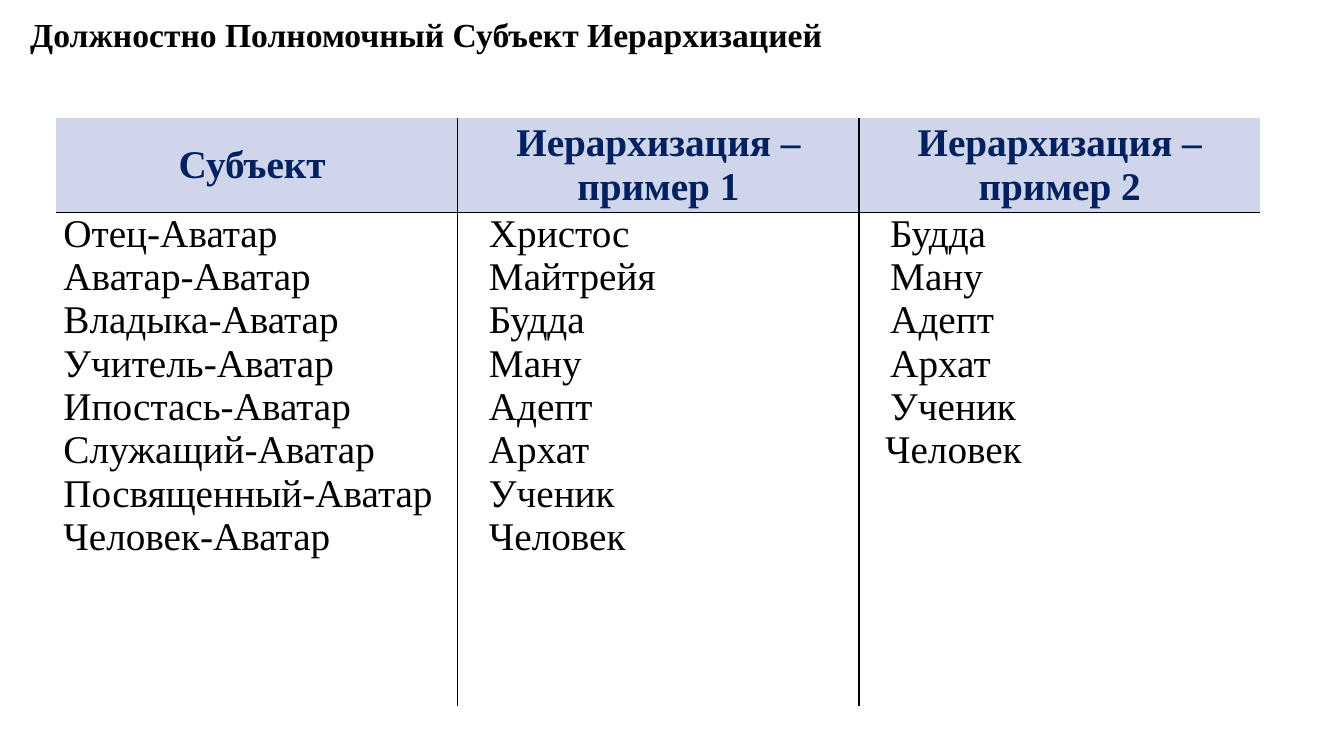
from lxml.etree import SubElement
from pptx import Presentation
from pptx.dml.color import RGBColor
from pptx.enum.text import MSO_ANCHOR, MSO_AUTO_SIZE, PP_ALIGN
from pptx.oxml.ns import qn
from pptx.util import Inches, Pt

TITLE = "Должностно Полномочный Субъект Иерархизацией"
TITLE_BOX = (0.2, 0.09, 13.13, 0.5)
TABLE_BOX = (0.56, 1.17, 11.94, 5.83)
HEADER_SHARE = 0.16
INDENT = 0.24
STEPS = ["Будда", "Ману", "Адепт", "Архат", "Ученик", "Человек"]
SUBJECTS = ["Отец", "Аватар", "Владыка", "Учитель", "Ипостась", "Служащий",
            "Посвященный", "Человек"]
COLUMNS = [
    ("Субъект ", [f"{subject}-Аватар" for subject in SUBJECTS], 0),
    ("Иерархизация –\vпример 1", ["Христос", "Майтрейя", *STEPS], INDENT),
    ("Иерархизация –\vпример 2", STEPS, INDENT),
]


def color(code):
    """Turn a hex string into a colour."""
    return RGBColor.from_string(code)


def set_values(target, values):
    """Set each attribute of the target from a dict."""
    for name, value in values.items():
        setattr(target, name, value)


def format_para(para, size, code, bold, align):
    """Give a paragraph its alignment and font."""
    set_values(para, {"alignment": align})
    set_values(para.font, {"name": "Times New Roman", "size": Pt(size), "bold": bold})
    para.font.color.rgb = color(code)


def set_borders(cell, visible_sides):
    """Draw black lines on the named sides and none on the others."""
    properties = cell._tc.get_or_add_tcPr()
    for side in "LRTB":
        line = SubElement(properties, qn(f"a:ln{side}"), w=str(Pt(1)))
        if side in visible_sides:
            fill = SubElement(line, qn("a:solidFill"))
            SubElement(fill, qn("a:srgbClr"), val="000000")
        else:
            SubElement(line, qn("a:noFill"))


def fill_cell(cell, lines, size, code, bold, align, indent=0):
    """Write the lines into a cell, one paragraph each."""
    set_values(cell, {"margin_left": Inches(0.07), "margin_right": Inches(0.07),
                      "margin_top": 0, "margin_bottom": 0})
    cell.text_frame.text = "\n".join(lines)
    for para in cell.text_frame.paragraphs:
        para._p.get_or_add_pPr().set("marL", str(Inches(indent)))
        format_para(para, size, code, bold, align)


def add_title(page, box):
    """Place the heading in the title placeholder."""
    title = page.shapes.title
    set_values(title, dict(zip(("left", "top", "width", "height"), map(Inches, box))))
    frame = title.text_frame
    set_values(frame, {"text": TITLE, "word_wrap": True,
                       "vertical_anchor": MSO_ANCHOR.TOP,
                       "auto_size": MSO_AUTO_SIZE.SHAPE_TO_FIT_TEXT})
    format_para(frame.paragraphs[0], 24, "000000", True, PP_ALIGN.LEFT)


def add_hierarchy_table(page, box):
    """Build the table of subjects and the two example hierarchies."""
    table = page.shapes.add_table(2, len(COLUMNS), *map(Inches, box)).table
    set_values(table, {"first_row": False, "horz_banding": False})
    for row, share in zip(table.rows, (HEADER_SHARE, 1 - HEADER_SHARE)):
        row.height = Inches(box[3] * share)
    for index, (heading, entries, indent) in enumerate(COLUMNS):
        table.columns[index].width = Inches(box[2] / len(COLUMNS))
        sides = ("L" if index else "") + ("R" if index < len(COLUMNS) - 1 else "")
        header, body = table.cell(0, index), table.cell(1, index)
        set_borders(header, sides + "B")
        set_borders(body, sides + "T")
        header.fill.solid()
        header.fill.fore_color.rgb = color("CFD5EA")
        body.fill.background()
        header.vertical_anchor = MSO_ANCHOR.MIDDLE
        fill_cell(header, [heading], 28, "002060", True, PP_ALIGN.CENTER)
        align = PP_ALIGN.JUSTIFY if indent else PP_ALIGN.LEFT
        fill_cell(body, entries, 28, "000000", False, align, indent)
    last_para = table.cell(1, len(COLUMNS) - 1).text_frame.paragraphs[-1]
    last_para.alignment = PP_ALIGN.LEFT
    last_para._p.get_or_add_pPr().set("marL", str(Inches(INDENT - 0.05)))


def main():
    """Build the deck and save it."""
    deck = Presentation()
    set_values(deck, {"slide_width": Inches(13.33), "slide_height": Inches(7.5)})
    page = deck.slides.add_slide(deck.slide_layouts[5])
    add_title(page, TITLE_BOX)
    add_hierarchy_table(page, TABLE_BOX)
    deck.save("out.pptx")


if __name__ == "__main__":
    main()
